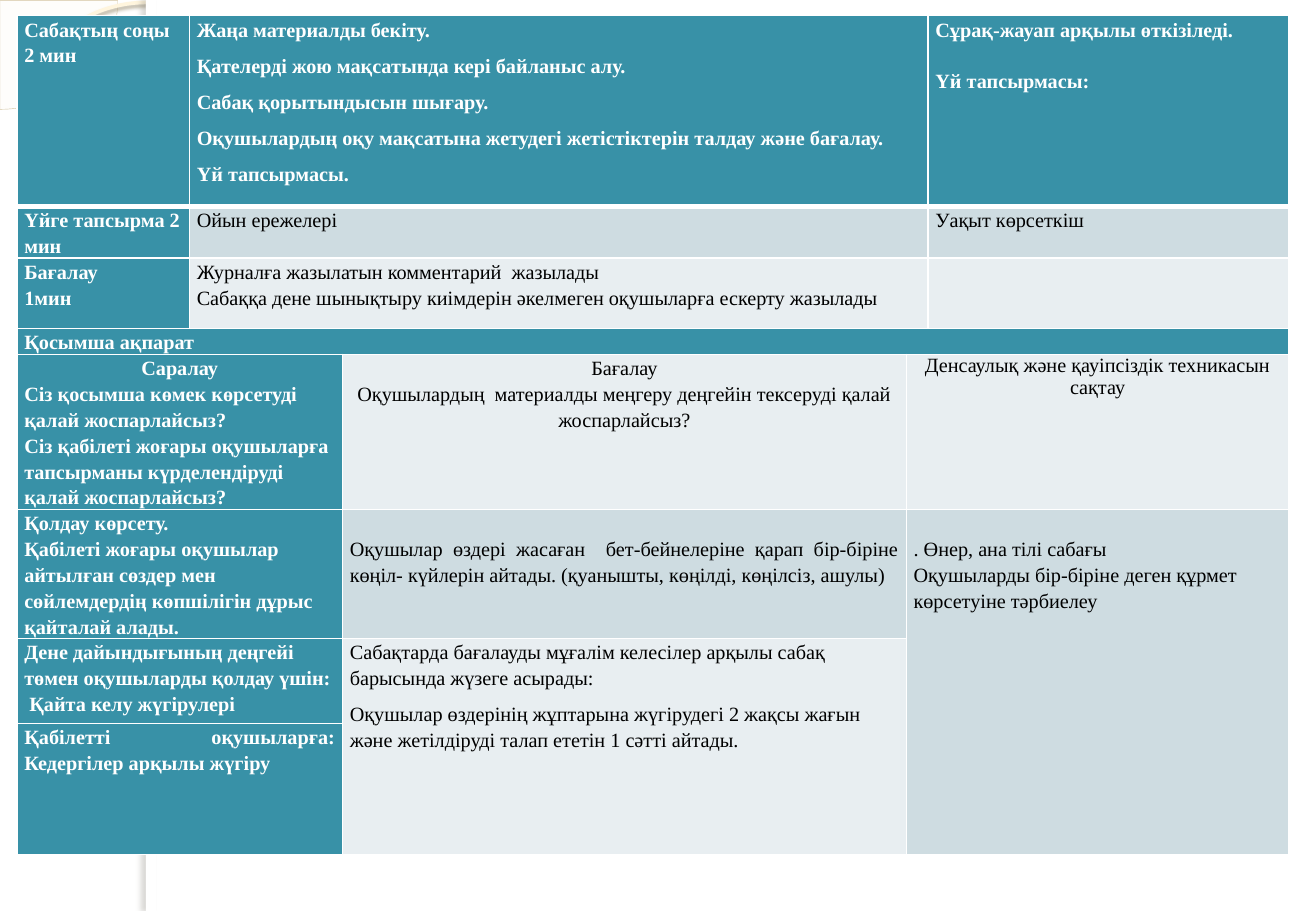
from dataclasses import dataclass
from lxml.etree import SubElement
from pptx import Presentation
from pptx.dml.color import RGBColor
from pptx.enum.shapes import MSO_SHAPE
from pptx.enum.text import PP_ALIGN
from pptx.oxml.ns import qn
from pptx.util import Inches, Pt

TEAL = RGBColor(0x38, 0x91, 0xA7)
TINT = RGBColor(0xCE, 0xDC, 0xE1)
PALE = RGBColor(0xE8, 0xEE, 0xF1)
WHITE = RGBColor(0xFF, 0xFF, 0xFF)
BLACK = RGBColor(0, 0, 0)
CREAM = RGBColor(0xFE, 0xFA, 0xF4)
SAND = RGBColor(0xD3, 0xC3, 0x9F)
IVORY = RGBColor(0xFF, 0xF5, 0xDE)
TAUPE = RGBColor(0xB0, 0xA6, 0x8F)
STONE = RGBColor(0x73, 0x6F, 0x63)

LEFT, MID, FULL = PP_ALIGN.LEFT, PP_ALIGN.CENTER, PP_ALIGN.JUSTIFY


@dataclass
class Para:
    """A paragraph with its alignment and spacing in points."""
    text: str
    align: PP_ALIGN = LEFT
    before: float = 0
    after: float = 0
    lead: float = 1.15


class Plan:
    """Draws on one slide, with lengths in percent of its width and height."""

    def __init__(self, deck, font, size):
        self.font, self.size = font, size
        self.wide, self.high = deck.slide_width, deck.slide_height
        self.slide = deck.slides.add_slide(deck.slide_layouts[6])

    def x(self, share):
        return round(self.wide * share / 100)

    def y(self, share):
        return round(self.high * share / 100)

    def box(self, left, top, wide, high):
        return self.x(left), self.y(top), self.x(wide), self.y(high)

    def tone(self, node, color, alpha):
        fill = SubElement(node, qn("a:srgbClr"), val=str(color))
        SubElement(fill, qn("a:alpha"), val=str(alpha * 1000))

    def shape(self, kind, place, fill=None, alpha=100, line=None, shade=None):
        item = self.slide.shapes.add_shape(kind, *self.box(*place))
        item.shadow.inherit = False
        if fill is None:
            item.fill.background()
        else:
            item.fill.solid()
            item.fill.fore_color.rgb = fill
            color = item._element.spPr.find(".//" + qn("a:srgbClr"))
            SubElement(color, qn("a:alpha"), val=str(alpha * 1000))
        if line is None:
            item.line.fill.background()
        else:
            item.line.color.rgb, item.line.width = line[0], Pt(line[1])
        if shade:
            color, dense, blur, angle = shade
            glow = SubElement(item._element.spPr.find(qn("a:effectLst")), qn("a:outerShdw"),
                              blurRad=str(Pt(blur)), dist=str(Pt(blur)),
                              dir=str(angle * 60000), algn="tl", rotWithShape="0")
            self.tone(glow, color, dense)
        return item

    def edge(self, cell, side, width):
        line = SubElement(cell._tc.get_or_add_tcPr(), qn("a:ln" + side), w=str(Pt(width)))
        fill = SubElement(line, qn("a:solidFill"))
        SubElement(fill, qn("a:srgbClr"), val=str(WHITE))

    def table(self, place, cols, rows):
        frame = self.slide.shapes.add_table(len(rows), len(cols), *self.box(*place))
        grid = frame.table
        for col, share in zip(grid.columns, cols):
            col.width = self.x(share)
        for row, share in zip(grid.rows, rows):
            row.height = self.y(share)
        for r in range(len(rows)):
            for c in range(len(cols)):
                cell = grid.cell(r, c)
                for side in "LRTB":
                    thick = (r, side) in ((0, "B"), (1, "T"))
                    self.edge(cell, side, 3 if thick else 1)
                cell.fill.solid()
                cell.fill.fore_color.rgb = TEAL
                cell.margin_left = cell.margin_right = Inches(0.06)
                cell.margin_top = cell.margin_bottom = 0
                end = cell.text_frame.paragraphs[0]._p.get_or_add_endParaRPr()
                end.set("sz", str(self.size * 100))
        return grid

    def cell(self, grid, spot, span, fill, paras, top=0):
        cell = grid.cell(*spot)
        if span != (1, 1):
            cell.merge(grid.cell(spot[0] + span[0] - 1, spot[1] + span[1] - 1))
        cell.fill.fore_color.rgb = fill
        cell.margin_top = self.y(top)
        if not paras:
            return
        frame = cell.text_frame
        frame.text = "\n".join(para.text for para in paras)
        for para, item in zip(paras, frame.paragraphs):
            item.alignment, item.line_spacing = para.align, para.lead
            item.space_before, item.space_after = Pt(para.before), Pt(para.after)
            for run in item.runs:
                run.font.name, run.font.size = self.font, Pt(self.size)
                run.font.bold = fill == TEAL
                run.font.color.rgb = WHITE if fill == TEAL else BLACK


GOALS = ["Жаңа материалды бекіту.", "Қателерді жою мақсатында кері байланыс алу.",
         "Сабақ қорытындысын шығару.",
         "Оқушылардың оқу мақсатына жетудегі жетістіктерін талдау және бағалау.",
         "Үй тапсырмасы."]
LINE = 2.83

CELLS = [
    ((0, 0), (1, 1), TEAL, [Para("Сабақтың соңы"), Para("2 мин")]),
    ((0, 1), (1, 3), TEAL, [Para(goal, before=3, after=3) for goal in GOALS]),
    ((0, 4), (1, 1), TEAL, [Para("Сұрақ-жауап арқылы өткізіледі."),
                            Para("Үй тапсырмасы:", before=15.3)]),
    ((1, 0), (1, 1), TEAL, [Para("Үйге тапсырма 2 мин")]),
    ((1, 1), (1, 3), TINT, [Para("Ойын ережелері", FULL)]),
    ((1, 4), (1, 1), TINT, [Para("Уақыт көрсеткіш")]),
    ((2, 0), (1, 1), TEAL, [Para("Бағалау"), Para("1мин")]),
    ((2, 1), (1, 3), PALE, [
        Para("Журналға жазылатын комментарий  жазылады"),
        Para("Сабаққа дене шынықтыру киімдерін әкелмеген оқушыларға ескерту жазылады")]),
    ((2, 4), (1, 1), PALE, []),
    ((3, 0), (1, 5), TEAL, [Para("Қосымша ақпарат")]),
    ((4, 0), (1, 2), TEAL, [
        Para("Саралау", MID),
        Para("Сіз қосымша көмек көрсетуді қалай жоспарлайсыз?"),
        Para("Сіз қабілеті жоғары оқушыларға  тапсырманы күрделендіруді  қалай жоспарлайсыз?")]),
    ((4, 2), (1, 1), PALE, [
        Para("Бағалау", MID),
        Para("Оқушылардың  материалды меңгеру деңгейін тексеруді қалай жоспарлайсыз?", MID)]),
    ((4, 3), (1, 2), PALE, [
        Para("Денсаулық және қауіпсіздік техникасын сақтау", MID, lead=1.0)]),
    ((5, 0), (1, 2), TEAL, [
        Para("Қолдау көрсету.", FULL),
        Para("Қабілеті жоғары оқушылар айтылған сөздер мен сөйлемдердің "
             "көпшілігін дұрыс қайталай алады.")]),
    ((5, 2), (1, 1), TINT, [
        Para("Оқушылар өздері жасаған  бет-бейнелеріне қарап бір-біріне көңіл- күйлерін "
             "айтады. (қуанышты, көңілді, көңілсіз, ашулы)", FULL)], LINE),
    ((5, 3), (3, 2), TINT, [
        Para(". Өнер, ана тілі сабағы", FULL),
        Para("Оқушыларды бір-біріне деген құрмет көрсетуіне тәрбиелеу")], LINE),
    ((6, 0), (1, 2), TEAL, [
        Para("Дене дайындығының деңгейі төмен оқушыларды қолдау үшін:  "
             "Қайта келу жүгірулері", before=6, after=6)]),
    ((6, 2), (2, 1), PALE, [
        Para("Сабақтарда бағалауды мұғалім келесілер арқылы сабақ барысында "
             "жүзеге асырады:", before=6, after=6),
        Para("Оқушылар өздерінің жұптарына жүгірудегі 2 жақсы жағын және "
             "жетілдіруді талап ететін 1 сәтті айтады.")]),
    ((7, 0), (1, 2), TEAL, [Para("Қабілетті оқушыларға: Кедергілер арқылы жүгіру", FULL)]),
]


def main():
    deck = Presentation()
    deck.slide_width, deck.slide_height = Inches(10.83), Inches(7.5)
    plan = Plan(deck, "Times New Roman", 12)
    pie = plan.shape(MSO_SHAPE.PIE, (-8.96, -11.87, 17.91, 23.87), CREAM, 33, (SAND, 0.25))
    pie.adjustments[0], pie.adjustments[1] = 0, 54
    plan.shape(MSO_SHAPE.OVAL, (1.85, 0.27, 18.65, 24.8), line=(IVORY, 2.15),
               shade=(TAUPE, 85, 2, 90))
    plan.shape(MSO_SHAPE.RECTANGLE, (11.08, 0, 88.92, 100), WHITE)
    plan.shape(MSO_SHAPE.RECTANGLE, (11.08, 0, 0.83, 100), WHITE,
               shade=(STONE, 25, 3, 180))
    grid = plan.table((1.29, 1.73, 96.68, 95.47), [13.11, 11.63, 42.84, 1.66, 27.42],
                      [20.93, 3.2, 7.73, 2.8, 16.67, 13.87, 9.33, 14.4])
    for cell in CELLS:
        plan.cell(grid, *cell)
    deck.save("out.pptx")


if __name__ == "__main__":
    main()
